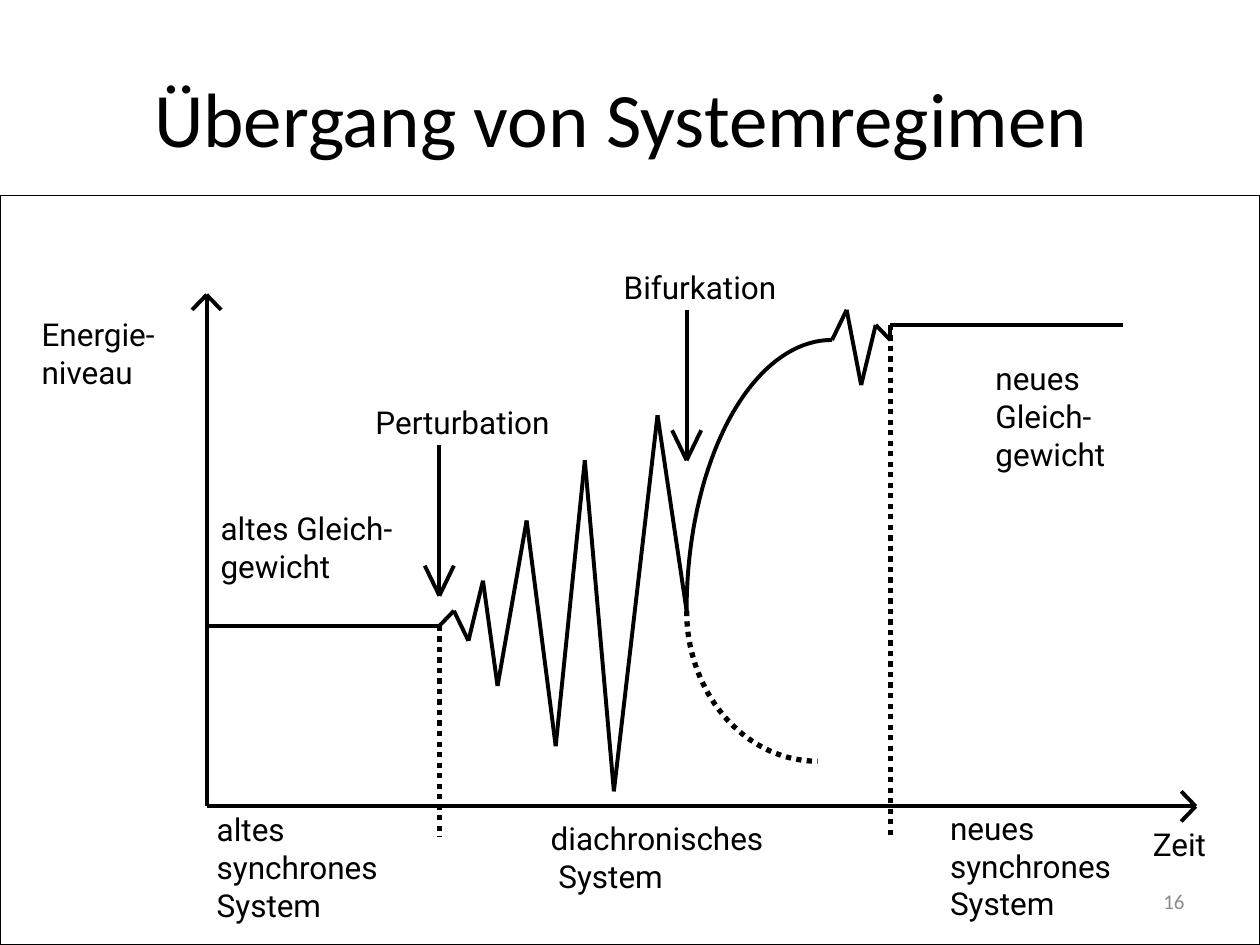
from itertools import pairwise
from math import cos, pi, sin

from lxml import etree
from pptx import Presentation
from pptx.dml.color import RGBColor
from pptx.enum.dml import MSO_LINE
from pptx.enum.shapes import MSO_CONNECTOR, MSO_SHAPE
from pptx.enum.text import MSO_ANCHOR, PP_ALIGN
from pptx.oxml.ns import qn
from pptx.util import Inches, Pt

WIDTH, HEIGHT = 10, 7.5
TITLE_BOTTOM = 1.55
# The diagram sits on a grid whose origin is the top of the energy axis.
LEFT, TOP = 1.64, 2.34
COLUMN, ROW = 7.85 / 68, 4.06 / 34
TIME_END, BASE = 68, 34
PERTURBATION, BIFURCATION, NEW_BALANCE = 16, 33, 47

OSCILLATION = [(0, 22), (16, 22), (17, 21), (18, 23), (19, 19), (20, 26),
               (22, 15), (24, 30), (26, 11), (28, 33), (31, 8), (33, 21)]
SETTLING = [(43, 3), (44, 1), (45, 6), (46, 2), (47, 3), (47, 2), (63, 2)]

# text, left, top, width, height in inches
LABELS = [
    ("Energie-\vniveau", 0.33, 2.5, 1.02, 0.67),
    ("Zeit", 9.15, 6.55, 0.46, 0.33),
    ("altes Gleich-\vgewicht", 1.75, 4.04, 1.52, 0.67),
    ("Bifurkation", 4.95, 2.13, 1.32, 0.33),
    ("neues\vGleich-\vgewicht", 7.9, 2.85, 0.95, 1),
    ("diachronisches\v System", 4.37, 6.5, 1.79, 0.67),
    ("altes\vsynchrones\vSystem", 1.72, 6.43, 1.38, 1),
    ("Perturbation", 2.98, 3.2, 1.51, 0.33),
    ("neues\vsynchrones\vSystem", 7.54, 6.42, 1.38, 1),
]


def color(hex_code):
    return RGBColor.from_string(hex_code)


def grid(point):
    column, row = point
    return Inches(LEFT + column * COLUMN), Inches(TOP + row * ROW)


def style_line(line, width=2.25, dotted=False):
    line.color.rgb = color("000000")
    line.width = Pt(3 if dotted else width)
    if dotted:
        line.dash_style = MSO_LINE.ROUND_DOT


def style_font(font, size, name, hex_code="000000"):
    for attribute, value in {"size": Pt(size), "name": name}.items():
        setattr(font, attribute, value)
    font.color.rgb = color(hex_code)


def add_path(shapes, points, dotted=False):
    """Join grid points with straight connectors."""
    for start, end in pairwise(points):
        segment = shapes.add_connector(MSO_CONNECTOR.STRAIGHT, *grid(start), *grid(end))
        style_line(segment.line, dotted=dotted)
        etree.SubElement(segment._element.spPr, qn("a:effectLst"))


def add_arrow(shapes, start, tip, barbs):
    """Draw a shaft and an open head; barbs are offsets from the tip."""
    add_path(shapes, [start, tip])
    for across, along in barbs:
        add_path(shapes, [tip, (tip[0] + across, tip[1] + along)])


def add_quarter_ellipse(shapes, start, end, dotted=False, steps=40):
    """Leave start vertically and reach end horizontally."""
    (x0, y0), (x1, y1) = start, end
    angles = [pi / 2 * step / steps for step in range(steps + 1)]
    points = [grid((x1 + (x0 - x1) * cos(a), y0 + (y1 - y0) * sin(a))) for a in angles]
    builder = shapes.build_freeform(*points[0])
    builder.add_line_segments(points[1:], close=False)
    curve = builder.convert_to_shape()
    curve.shadow.inherit = False
    curve.fill.background()
    style_line(curve.line, dotted=dotted)


def add_label(shapes, text, *box):
    frame = shapes.add_textbox(*map(Inches, box)).text_frame
    for side in ("left", "right", "top", "bottom"):
        setattr(frame, f"margin_{side}", 0)
    frame.word_wrap = False
    frame.text = text
    style_font(frame.paragraphs[0].font, 18, "Roboto")


def add_title(slide):
    title = slide.shapes.title
    box = {"left": 0.5, "top": 0.3, "width": 9, "height": 1.25}
    for attribute, value in box.items():
        setattr(title, attribute, Inches(value))
    frame = title.text_frame
    frame.text = "Übergang von Systemregimen "
    frame.vertical_anchor = MSO_ANCHOR.MIDDLE
    frame.paragraphs[0].alignment = PP_ALIGN.CENTER
    style_font(frame.paragraphs[0].font, 44, "Calibri")


def add_frame(slide):
    border = slide.shapes.add_shape(
        MSO_SHAPE.RECTANGLE, 0, Inches(TITLE_BOTTOM),
        Inches(WIDTH), Inches(HEIGHT - TITLE_BOTTOM))
    border.shadow.inherit = False
    border.fill.background()
    style_line(border.line, 0.75)


def add_page_number(slide):
    frame = slide.shapes.add_textbox(*map(Inches, (7.17, 6.95, 2.33, 0.4))).text_frame
    frame.word_wrap = True
    frame.vertical_anchor = MSO_ANCHOR.MIDDLE
    frame.text = "16"
    frame.paragraphs[0].alignment = PP_ALIGN.RIGHT
    style_font(frame.paragraphs[0].font, 12, "Calibri", "8C8C8C")


def add_diagram(slide):
    shapes = slide.shapes.add_group_shape().shapes
    add_arrow(shapes, (0, BASE), (0, 0), [(-1, 1), (1, 1)])
    add_arrow(shapes, (0, BASE), (TIME_END, BASE), [(-1, -1), (-1, 1)])

    add_path(shapes, OSCILLATION)
    fork = OSCILLATION[-1]
    add_quarter_ellipse(shapes, fork, SETTLING[0])
    add_quarter_ellipse(shapes, fork, (42, 31), dotted=True)
    add_path(shapes, SETTLING)

    for column, row in ((PERTURBATION, 22), (NEW_BALANCE, 2)):
        add_path(shapes, [(column, row), (column, BASE + 2)], dotted=True)
    for column, start, tip in ((PERTURBATION, 10, 20), (BIFURCATION, 1, 11)):
        add_arrow(shapes, (column, start), (column, tip), [(-1, -2), (1, -2)])
    for label in LABELS:
        add_label(shapes, *label)


def main():
    deck = Presentation()
    deck.slide_width, deck.slide_height = Inches(WIDTH), Inches(HEIGHT)
    slide = deck.slides.add_slide(deck.slide_layouts[5])
    add_frame(slide)
    add_title(slide)
    add_diagram(slide)
    add_page_number(slide)
    deck.save("out.pptx")


if __name__ == "__main__":
    main()
